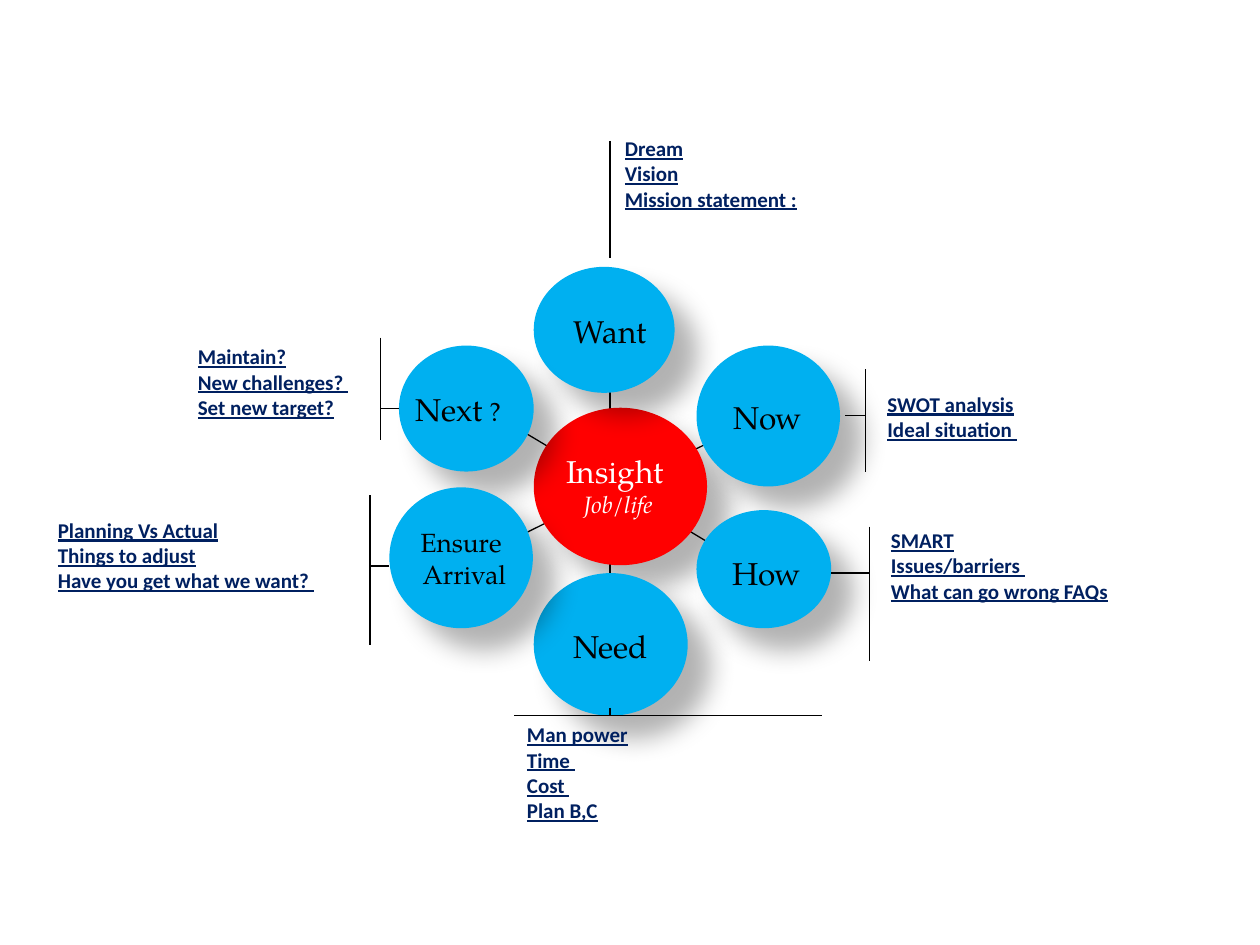
from pptx import Presentation
from pptx.dml.color import RGBColor
from pptx.enum.shapes import MSO_CONNECTOR, MSO_SHAPE
from pptx.enum.text import MSO_ANCHOR, PP_ALIGN
from pptx.oxml import parse_xml
from pptx.oxml.ns import nsdecls
from pptx.util import Pt

BLACK, WHITE, NAVY, RED, BLUE = "000000", "FFFFFF", "002060", "FF0000", "00B0F0"
SERIF, SANS = "TeX Gyre Pagella", "Calibri"

# Notes: left, top, width, height, lines
NOTES = [
    (350, 74, 189, 51, ["Dream", "Vision", "Mission statement :"]),
    (294, 409, 118, 66, ["Man power", "Time ", "Cost ", "Plan B,C"]),
    (500, 220, 143, 51, ["SWOT analysis", "Ideal situation "]),
    (502, 298, 229, 66, ["SMART", "Issues/barriers ", "What can go wrong FAQs"]),
    (26, 292, 261, 51,
     ["Planning Vs Actual", "Things to adjust", "Have you get what we want? "]),
    (106, 193, 161, 51, ["Maintain?", "New challenges? ", "Set new target?"]),
]

# Circles: place, fill, then label place (None: inside the circle), alignment
# and paragraphs, each a list of (text, size, italic, colour)
CENTER, LEFT = PP_ALIGN.CENTER, PP_ALIGN.LEFT
CIRCLES = [
    ((305, 233, 99, 90), RED, (294, 255, 115, 62), CENTER,
     [[("Insight", 18, False, WHITE)], [(" Job/life", 13.5, True, WHITE)]]),
    ((305, 152.5, 80.5, 72), BLUE, (304.5, 175, 93, 29), CENTER,
     [[("Want ", 18, False, BLACK)]]),
    ((398, 197.5, 82, 80.5), BLUE, (394.5, 224, 88.5, 29), CENTER,
     [[("Now", 18, False, BLACK)]]),
    ((305, 327.5, 88, 81.5), BLUE, (304, 355, 94.5, 29), CENTER,
     [[("Need ", 18, False, BLACK)]]),
    ((398, 291.5, 77, 67.5), BLUE, (395.5, 313, 89.5, 29), CENTER,
     [[("How ", 18, False, BLACK)]]),
    ((228, 197.5, 77, 72), BLUE, (230.5, 219.5, 79, 51), LEFT,
     [[("Next", 18, False, BLACK), (" ?", 15, False, BLACK)]]),
    ((222.5, 278.5, 82, 80.5), BLUE, None, CENTER,
     [[("Ensure", 15, False, BLACK)], [(" Arrival", 15, False, BLACK)]]),
]

# Lines: start x, start y, end x, end y
SPOKES = [
    (299.5, 305, 409, 251),
    (299.5, 247, 404, 309.5),
    (348.5, 219.5, 348.5, 332.5),
]
BRACKETS = [
    (348.5, 80.5, 348.5, 147.5),
    (494.5, 211, 494.5, 269.5), (483, 237.5, 494.5, 237.5),
    (497, 301, 497, 377.5), (475, 327.5, 497, 327.5),
    (294, 409, 469.5, 409), (348.5, 404.5, 348.5, 409),
    (211.5, 283, 211.5, 368.5), (211.5, 323.5, 222.5, 323.5),
    (217.5, 193, 217.5, 251.5), (217.5, 233.5, 228, 233.5),
]

SHADOW = (
    f'<a:effectLst {nsdecls("a")}><a:outerShdw blurRad="{Pt(15)}" dist="{Pt(18)}" '
    'dir="2700000" algn="tl" rotWithShape="0"><a:srgbClr val="000000">'
    '<a:alpha val="30000"/></a:srgbClr></a:outerShdw></a:effectLst>'
)


def color(value):
    return RGBColor.from_string(value)


def points(values):
    return [Pt(value) for value in values]


def add_span(para, text, *, size, font, fill, bold=False, italic=False, underline=False):
    span = para.add_run()
    span.text = text
    span.font.size = Pt(size)
    span.font.name = font
    span.font.color.rgb = color(fill)
    span.font.bold = bold
    span.font.italic = italic
    span.font.underline = underline


def next_para(frame, index):
    return frame.add_paragraph() if index else frame.paragraphs[0]


def add_lines(page, lines):
    for line in lines:
        connector = page.shapes.add_connector(MSO_CONNECTOR.STRAIGHT, *points(line))
        connector.line.color.rgb = color(BLACK)
        connector.line.width = Pt(0.75)
        properties = connector._element.spPr
        properties.append(parse_xml(f'<a:effectLst {nsdecls("a")}/>'))


def add_note(page, place, lines):
    frame = page.shapes.add_textbox(*points(place)).text_frame
    frame.word_wrap = True
    for index, line in enumerate(lines):
        add_span(next_para(frame, index), line, size=12, font=SANS, fill=NAVY,
                 bold=True, underline=True)


def add_circle(page, place, fill, label_place, align, paragraphs):
    circle = page.shapes.add_shape(MSO_SHAPE.OVAL, *points(place))
    circle.fill.solid()
    circle.fill.fore_color.rgb = color(fill)
    circle.line.fill.background()
    circle._element.spPr.append(parse_xml(SHADOW))

    if label_place:
        frame = page.shapes.add_textbox(*points(label_place)).text_frame
        frame.word_wrap = True
    else:
        frame = circle.text_frame
        frame.word_wrap = False
        frame.vertical_anchor = MSO_ANCHOR.MIDDLE
    for index, spans in enumerate(paragraphs):
        para = next_para(frame, index)
        para.alignment = align
        for text, size, italic, fill in spans:
            add_span(para, text, size=size, font=SERIF, fill=fill, italic=italic)


def main():
    deck = Presentation()
    deck.slide_width, deck.slide_height = Pt(720), Pt(540)
    page = deck.slides.add_slide(deck.slide_layouts[6])

    # Spokes lie behind the circles, brackets in front
    add_lines(page, SPOKES)
    for circle in CIRCLES:
        add_circle(page, *circle)
    add_lines(page, BRACKETS)
    for *place, lines in NOTES:
        add_note(page, place, lines)

    deck.save("out.pptx")


if __name__ == "__main__":
    main()
